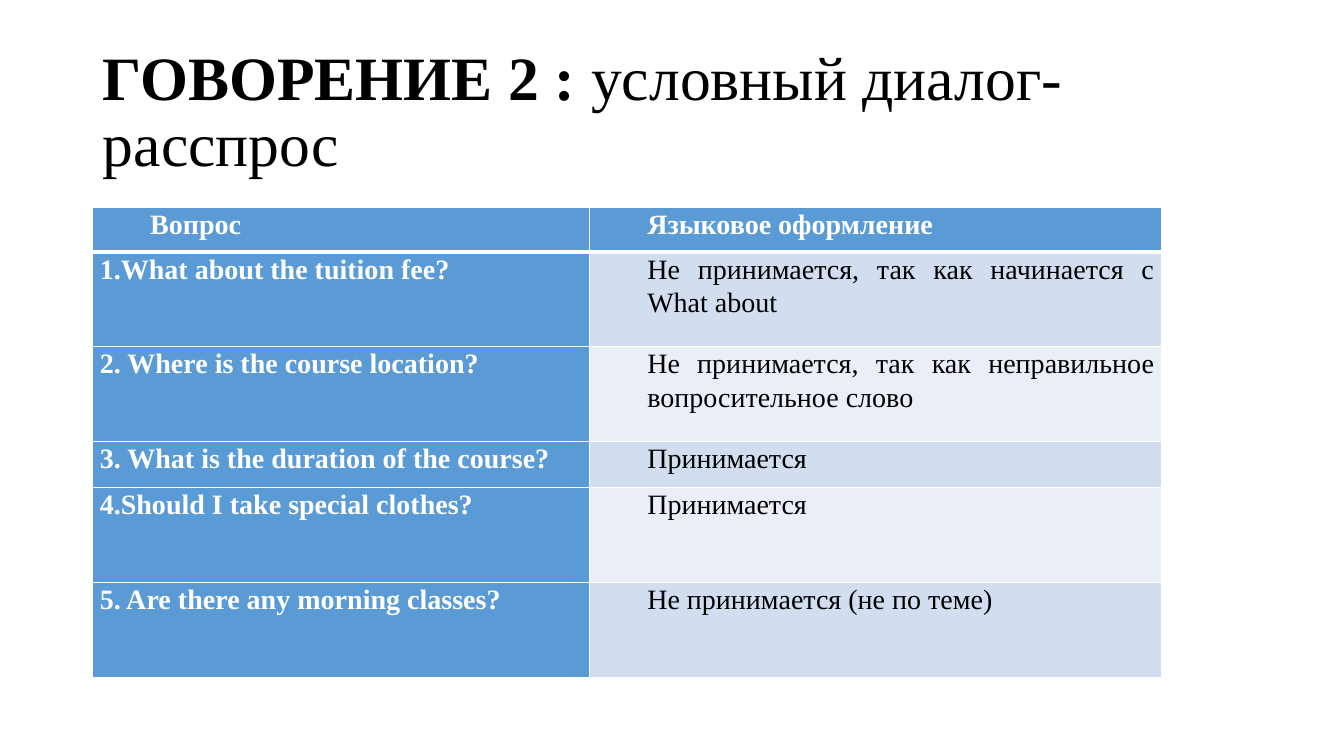
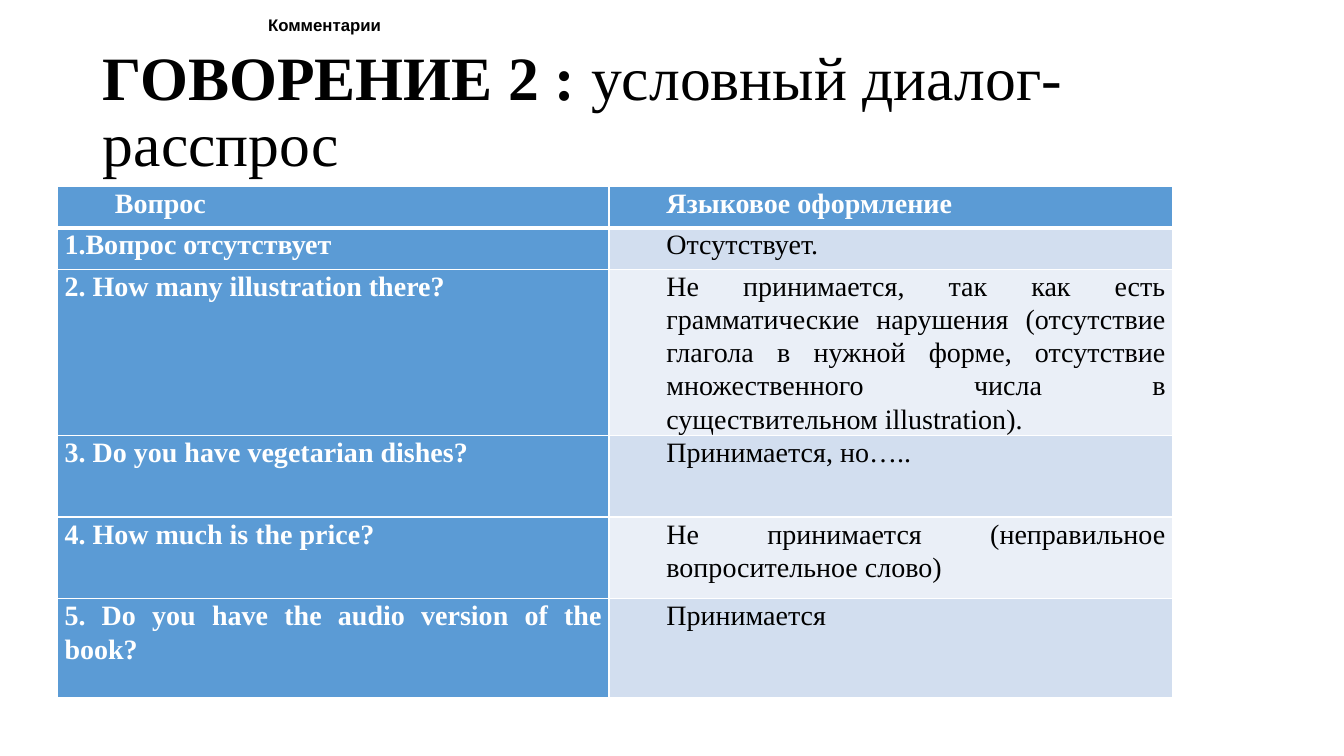
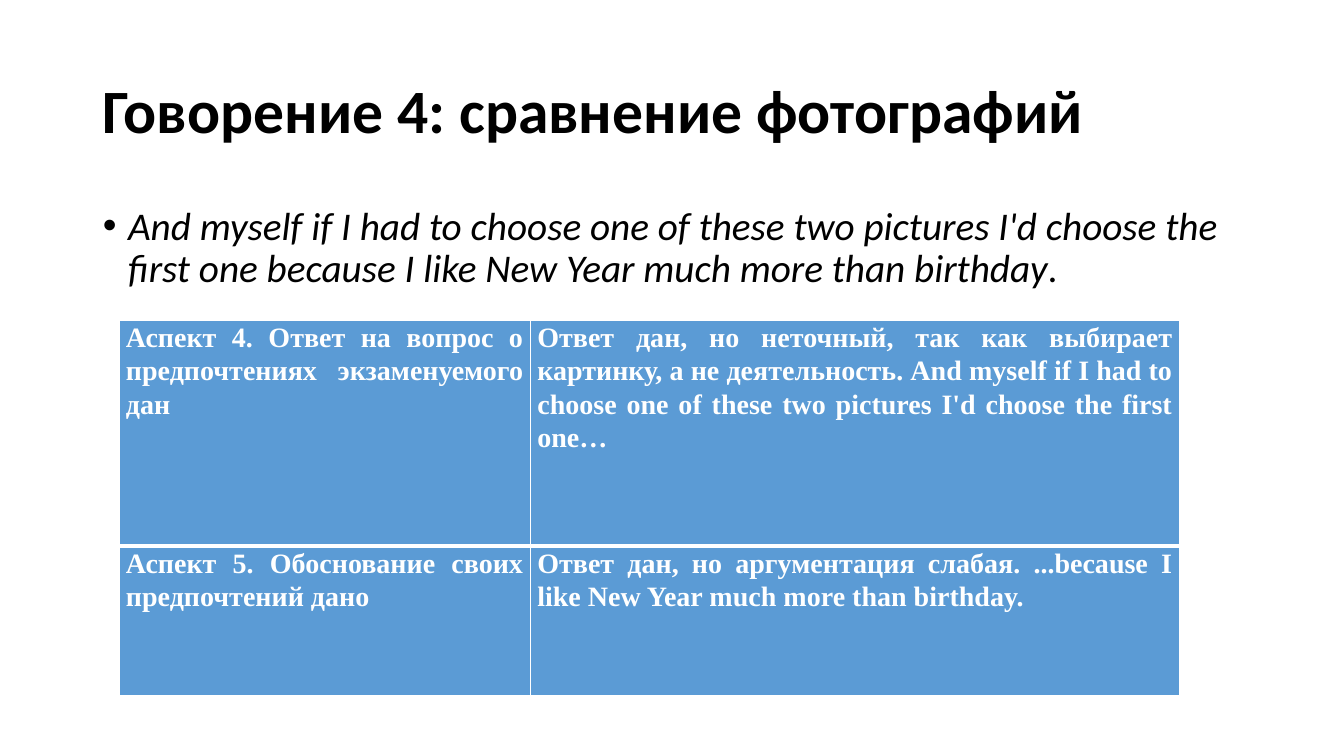
from dataclasses import dataclass

from lxml.etree import SubElement
from pptx import Presentation
from pptx.dml.color import RGBColor
from pptx.enum.text import MSO_ANCHOR, MSO_AUTO_SIZE, PP_ALIGN
from pptx.oxml import parse_xml
from pptx.oxml.ns import nsdecls, qn
from pptx.util import Pt

EMU_PER_PX = 9144  # 100 px to the inch


@dataclass(frozen=True)
class Theme:
    black: str = "000000"
    white: str = "FFFFFF"
    accent: str = "5B9BD5"
    bands: tuple = ("D2DEEF", "EAEFF7")
    serif: str = "Times New Roman"
    sans: str = "Calibri"
    label_font: str = "Arial"
    title_size: int = 44
    body_size: int = 28
    table_size: int = 20
    label_size: int = 12
    thin: int = 1
    thick: int = 3


def px(length):
    return length * EMU_PER_PX


class Deck:
    """Holds the style, the presentation and the current slide."""

    TITLE_AND_BODY, TITLE_ONLY = 1, 5

    def __init__(self, theme):
        self.theme = theme
        self.presentation = Presentation()
        self.presentation.slide_width = px(1333)
        self.presentation.slide_height = px(750)
        self.slide = None

    def add_slide(self, layout):
        layouts = self.presentation.slide_layouts
        self.slide = self.presentation.slides.add_slide(layouts[layout])

    def place(self, shape, left, top, width, height):
        shape.left, shape.top = px(left), px(top)
        shape.width, shape.height = px(width), px(height)

    def add_run(self, paragraph, text, font, size, color, bold=False, italic=False):
        run = paragraph.add_run()
        run.text = text
        run.font.name = font
        run.font.size = Pt(size)
        run.font.bold = bold
        run.font.italic = italic
        run.font.color.rgb = RGBColor.from_string(color)

    def title(self, runs, font):
        """Fill the title; runs are (text, bold) pairs."""
        shape = self.slide.shapes.title
        self.place(shape, 92, 40, 1150, 145)
        frame = shape.text_frame
        frame.auto_size = MSO_AUTO_SIZE.NONE
        frame.vertical_anchor = MSO_ANCHOR.MIDDLE
        paragraph = frame.paragraphs[0]
        paragraph.alignment = PP_ALIGN.LEFT
        paragraph.line_spacing = 0.9
        for text, bold in runs:
            self.add_run(paragraph, text, font, self.theme.title_size,
                         self.theme.black, bold=bold)

    def bullet(self, runs):
        """Fill the body with one bullet; runs are (text, italic) pairs."""
        shape = self.slide.placeholders[1]
        self.place(shape, 92, 200, 1150, 476)
        frame = shape.text_frame
        frame.auto_size = MSO_AUTO_SIZE.NONE
        paragraph = frame.paragraphs[0]
        properties = paragraph._p.get_or_add_pPr()
        properties.set("marL", str(px(25)))
        properties.set("indent", str(px(-25)))
        SubElement(properties, qn("a:buFont")).set("typeface", self.theme.label_font)
        SubElement(properties, qn("a:buChar")).set("char", "•")
        paragraph.line_spacing = 0.9
        paragraph.space_before = Pt(0)
        for text, italic in runs:
            self.add_run(paragraph, text, self.theme.sans, self.theme.body_size,
                         self.theme.black, italic=italic)

    def label(self, text, left, top, width, height):
        shape = self.slide.shapes.add_textbox(*map(px, (left, top, width, height)))
        frame = shape.text_frame
        frame.word_wrap = True
        frame.vertical_anchor = MSO_ANCHOR.MIDDLE
        paragraph = frame.paragraphs[0]
        paragraph.alignment = PP_ALIGN.CENTER
        self.add_run(paragraph, text, self.theme.label_font, self.theme.label_size,
                     self.theme.black, bold=True)

    def cell_borders(self, cell, row):
        """Thin white rules, with a thick one under the first row."""
        top = self.theme.thick if row == 1 else self.theme.thin
        bottom = self.theme.thick if row == 0 else self.theme.thin
        widths = {"L": self.theme.thin, "R": self.theme.thin, "T": top, "B": bottom}
        properties = cell._tc.get_or_add_tcPr()
        for index, (side, width) in enumerate(widths.items()):
            properties.insert(index, parse_xml(
                f'<a:ln{side} {nsdecls("a")} w="{Pt(width)}"><a:solidFill>'
                f'<a:srgbClr val="{self.theme.white}"/></a:solidFill></a:ln{side}>'))

    def cell(self, cell, row, text, fill, strong, indent):
        cell.fill.solid()
        cell.fill.fore_color.rgb = RGBColor.from_string(fill)
        cell.margin_left = cell.margin_right = px(7)
        cell.margin_top = cell.margin_bottom = 0
        self.cell_borders(cell, row)
        paragraph = cell.text_frame.paragraphs[0]
        paragraph._p.get_or_add_pPr().set("marL", str(px(indent)))
        paragraph.alignment = PP_ALIGN.JUSTIFY
        paragraph.line_spacing = 1.07
        self.add_run(paragraph, text, self.theme.serif, self.theme.table_size,
                     self.theme.white if strong else self.theme.black, bold=strong)

    def table(self, left, top, columns, heights, rows, banded=True):
        """A banded table has a header row, a strong first column and indents."""
        frame = self.slide.shapes.add_table(
            len(rows), len(columns), px(left), px(top),
            px(sum(columns)), px(sum(heights)))
        table = frame.table
        table.first_row = table.horz_banding = False
        for column, width in zip(table.columns, columns):
            column.width = px(width)
        for row, (texts, height) in enumerate(zip(rows, heights)):
            table.rows[row].height = px(height)
            for column, text in enumerate(texts):
                strong = not banded or row == 0 or column == 0
                fill = self.theme.accent if strong else self.theme.bands[(row - 1) % 2]
                indent = 50 if banded and (row == 0 or column == 1) else 0
                self.cell(table.cell(row, column), row, text, fill, strong, indent)


DIALOGUE_TITLE = [("ГОВОРЕНИЕ 2 : ", True), ("условный диалог-расспрос", False)]
DIALOGUE_HEADER = ("Вопрос", "Языковое оформление")


def main():
    theme = Theme()
    deck = Deck(theme)

    # Dialogue: first set of questions
    deck.add_slide(Deck.TITLE_ONLY)
    deck.title(DIALOGUE_TITLE, theme.serif)
    deck.table(92, 206, (493, 567), (44, 94, 94, 46, 94, 94), [
        DIALOGUE_HEADER,
        ("1.What about the tuition fee?",
         "Не принимается, так как начинается с What about"),
        ("2. Where is the course location?",
         "Не принимается, так как неправильное вопросительное слово"),
        ("3. What is the duration of the course?", "Принимается"),
        ("4.Should I take special clothes?", "Принимается"),
        ("5. Are there any morning classes?", "Не принимается (не по теме)"),
    ])

    # Dialogue: second set of questions
    deck.add_slide(Deck.TITLE_ONLY)
    deck.title(DIALOGUE_TITLE, theme.serif)
    deck.table(57, 185, (547, 559), (41, 41, 165, 81, 81, 98), [
        DIALOGUE_HEADER,
        ("1.Вопрос отсутствует", "Отсутствует."),
        ("2. How many illustration there?",
         "Не принимается, так как есть грамматические нарушения (отсутствие "
         "глагола в нужной форме, отсутствие множественного числа в "
         "существительном illustration)."),
        ("3. Do you have vegetarian dishes?", "Принимается, но….."),
        ("4. How much is the price?",
         "Не принимается (неправильное вопросительное слово)"),
        ("5. Do you have the audio version of the book?", "Принимается"),
    ])
    deck.label("Комментарии", 222, 10, 200, 30)

    # Comparing photographs
    deck.add_slide(Deck.TITLE_AND_BODY)
    deck.title([("Говорение 4: сравнение фотографий", True)], theme.sans)
    deck.bullet([
        ("And myself if I had to choose one of these two pictures I'd choose "
         "the first one because I like New Year much more than birthday", True),
        (".", False),
    ])
    deck.table(118, 318, (408, 644), (224, 148), [
        ("Аспект 4. Ответ на вопрос о предпочтениях экзаменуемого дан",
         "Ответ дан, но неточный, так как выбирает картинку, а не деятельность. "
         "And myself if I had to choose one of these two pictures I'd choose "
         "the first one…"),
        ("Аспект 5. Обоснование своих предпочтений дано",
         "Ответ дан, но аргументация слабая. ...because I like New Year much "
         "more than birthday."),
    ], banded=False)

    deck.presentation.save("out.pptx")


if __name__ == "__main__":
    main()
